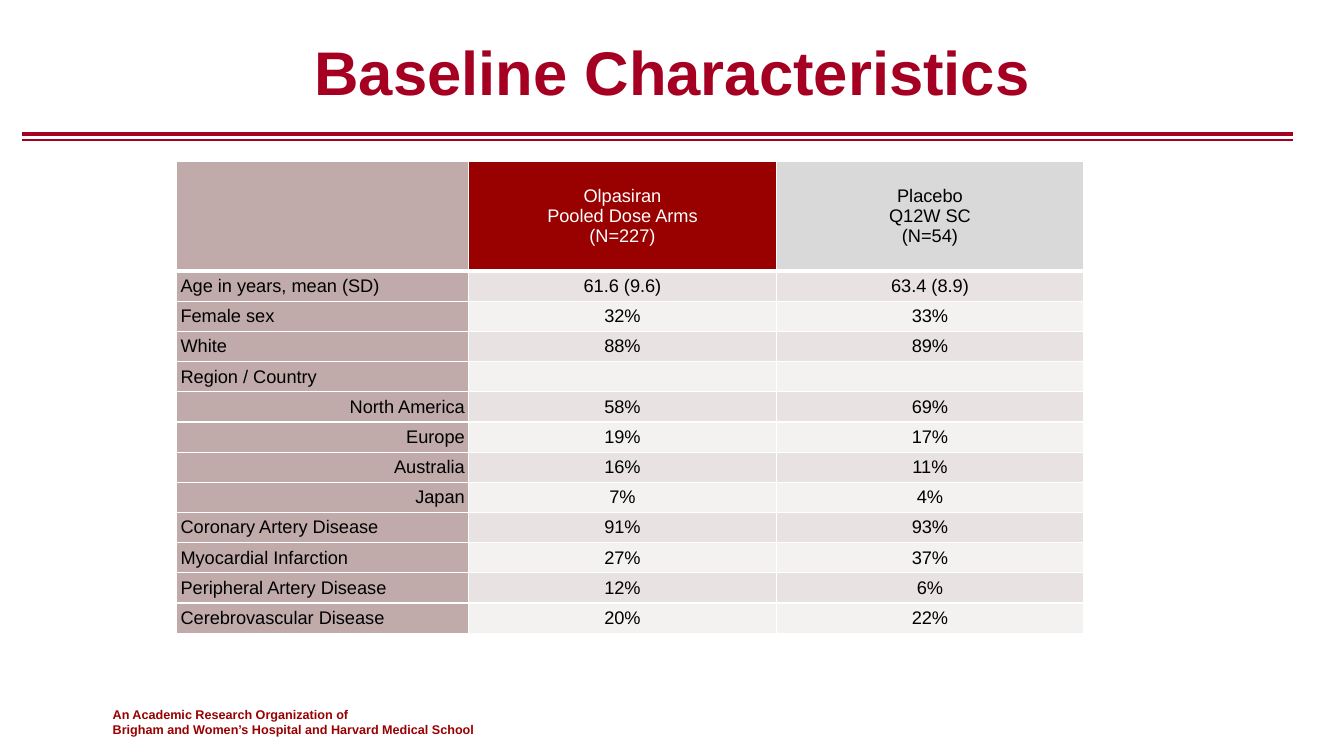
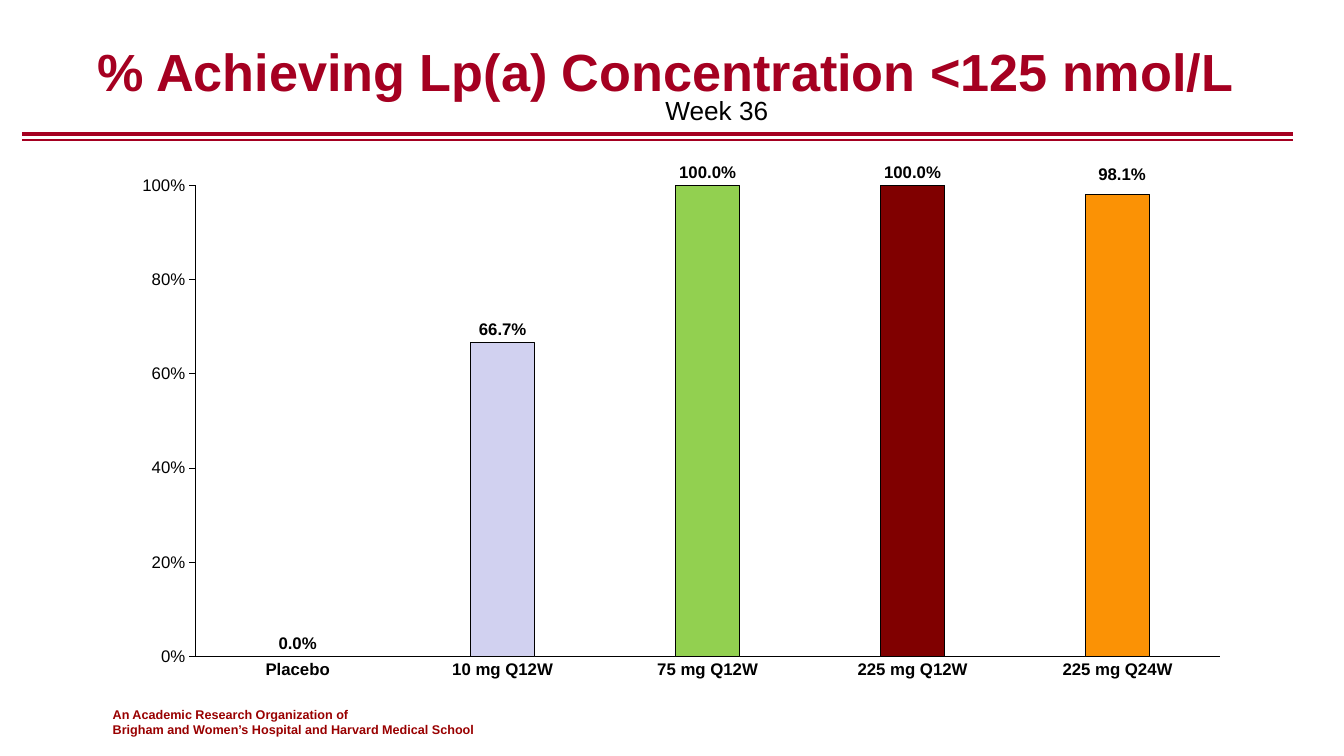
from lxml.etree import SubElement
from pptx import Presentation
from pptx.chart.data import CategoryChartData
from pptx.dml.color import RGBColor
from pptx.enum.chart import XL_CHART_TYPE, XL_LABEL_POSITION, XL_TICK_MARK
from pptx.enum.text import MSO_ANCHOR, PP_ALIGN
from pptx.oxml import parse_xml
from pptx.oxml.ns import nsdecls, qn
from pptx.util import Cm, Pt

FONT = "Arial"
COLORS = {
    "title": "A50021", "footer": "990000", "black": "000000", "white": "FFFFFF",
    "treated": "990000", "placebo": "D9D9D9", "label": "C0AAAA",
    "odd_row": "E8E2E2", "even_row": "F4F1F1",
}
FOOTER = ("An Academic Research Organization of\n"
          "Brigham and Women’s Hospital and Harvard Medical School")
COLUMN_WIDTHS = (7.36, 7.75, 7.75)
HEADER_HEIGHT, ROW_HEIGHT = 2.77, 0.76
HEADER = (
    ("", "label", "black"),
    ("Olpasiran\nPooled Dose Arms\n(N=227)", "treated", "white"),
    ("Placebo\nQ12W SC\n(N=54)", "placebo", "black"),
)
BASELINE = (
    ("Age in years, mean (SD)", "61.6 (9.6)", "63.4 (8.9)"),
    ("Female sex", "32%", "33%"),
    ("White", "88%", "89%"),
    ("Region / Country", "", ""),
    ("North America", "58%", "69%"),
    ("Europe", "19%", "17%"),
    ("Australia", "16%", "11%"),
    ("Japan", "7%", "4%"),
    ("Coronary Artery Disease", "91%", "93%"),
    ("Myocardial Infarction", "27%", "37%"),
    ("Peripheral Artery Disease", "12%", "6%"),
    ("Cerebrovascular Disease", "20%", "22%"),
)
REGIONS = {"North America", "Europe", "Australia", "Japan"}
# Dose, share of patients below the threshold, bar colour
RESPONSE = (
    ("Placebo", 0, "D1D1F0"),
    ("10 mg Q12W", 0.667, "D1D1F0"),
    ("75 mg Q12W", 1, "92D050"),
    ("225 mg Q12W", 1, "800000"),
    ("225 mg Q24W", 0.981, "FB9205"),
)


def rgb(color):
    return RGBColor.from_string(COLORS.get(color, color))


def style_font(font, size, color="black", bold=False):
    font.name, font.size, font.bold = FONT, Pt(size), bold
    font.color.rgb = rgb(color)


def write(frame, text, size, align=PP_ALIGN.LEFT, **style):
    """Fill a text frame, one paragraph for each line of text."""
    for index, line in enumerate(text.split("\n")):
        paragraph = frame.paragraphs[0] if index == 0 else frame.add_paragraph()
        paragraph.alignment = align
        if line:
            run = paragraph.add_run()
            run.text = line
            style_font(run.font, size, **style)


def set_borders(cell, bottom):
    """Draw white cell edges, 1 pt except for the bottom one."""
    properties = cell._tc.get_or_add_tcPr()
    for side, width in (("L", 1), ("R", 1), ("T", 1), ("B", bottom)):
        edge = SubElement(properties, qn(f"a:ln{side}"), w=str(Pt(width)))
        fill = SubElement(edge, qn("a:solidFill"))
        SubElement(fill, qn("a:srgbClr"), val=COLORS["white"])


def chart_layout(**values):
    """Build a manual chart layout from element names and values."""
    parts = "".join(f'<c:{name} val="{value}"/>' for name, value in values.items())
    return parse_xml(f"<c:layout {nsdecls('c')}><c:manualLayout>{parts}"
                     "</c:manualLayout></c:layout>")


class Deck:
    def __init__(self):
        self.presentation = Presentation()
        self.presentation.slide_width = Cm(33.87)
        self.presentation.slide_height = Cm(19.05)
        self.slide = None

    def new_slide(self, title, title_size):
        self.slide = self.presentation.slides.add_slide(
            self.presentation.slide_layouts[6])
        self.rule(3.38, 3)
        self.rule(3.53, 1.5)
        self.text(FOOTER, (2.59, 17.68, 11, 1.02), size=9, color="footer", bold=True)
        self.text(title, (1.9, 0.2, 30.1, 3.18), anchor=MSO_ANCHOR.MIDDLE,
                  size=title_size, align=PP_ALIGN.CENTER, color="title", bold=True)

    def rule(self, top, width):
        line = self.slide.shapes.add_connector(
            1, Cm(0.56), Cm(top), Cm(32.58), Cm(top))
        line.line.color.rgb = rgb("title")
        line.line.width = Pt(width)
        SubElement(line._element.spPr, qn("a:effectLst"))

    def text(self, text, box, anchor=MSO_ANCHOR.TOP, **style):
        frame = self.slide.shapes.add_textbox(*map(Cm, box)).text_frame
        frame.word_wrap = True
        frame.vertical_anchor = anchor
        write(frame, text, **style)

    def cell(self, cell, text, fill, align=PP_ALIGN.CENTER, color="black", bottom=1):
        cell.margin_left = cell.margin_right = Cm(0.1)
        cell.margin_top = cell.margin_bottom = 0
        cell.vertical_anchor = MSO_ANCHOR.MIDDLE
        write(cell.text_frame, text, 13, align, color=color)
        set_borders(cell, bottom)
        cell.fill.solid()
        cell.fill.fore_color.rgb = rgb(fill)

    def baseline_table(self, left, top):
        height = HEADER_HEIGHT + ROW_HEIGHT * len(BASELINE)
        table = self.slide.shapes.add_table(
            len(BASELINE) + 1, len(HEADER), Cm(left), Cm(top),
            Cm(sum(COLUMN_WIDTHS)), Cm(height)).table
        for column, width in zip(table.columns, COLUMN_WIDTHS):
            column.width = Cm(width)
        for index, row in enumerate(table.rows):
            row.height = Cm(ROW_HEIGHT if index else HEADER_HEIGHT)
        for column, (text, fill, color) in enumerate(HEADER):
            self.cell(table.cell(0, column), text, fill, color=color, bottom=3)
        for row, (label, *values) in enumerate(BASELINE, 1):
            align = PP_ALIGN.RIGHT if label in REGIONS else PP_ALIGN.LEFT
            self.cell(table.cell(row, 0), label, "label", align)
            for column, value in enumerate(values, 1):
                self.cell(table.cell(row, column), value,
                          "odd_row" if row % 2 else "even_row")

    def response_chart(self, box):
        doses, shares, bar_colors = zip(*RESPONSE)
        data = CategoryChartData(number_format="0.0%")
        data.categories = doses
        data.add_series("Series 1", shares)
        chart = self.slide.shapes.add_chart(
            XL_CHART_TYPE.COLUMN_CLUSTERED, *map(Cm, box), data).chart
        chart.has_legend = chart.has_title = False
        style_font(chart.font, 10)
        self.chart_axes(chart)

        plot = chart.plots[0]
        plot.vary_by_categories = False
        plot.gap_width, plot.overlap = 219, -27
        series = plot.series[0]
        series.invert_if_negative = False
        for index, color in enumerate(bar_colors):
            bar = series.points[index].format
            bar.fill.solid()
            bar.fill.fore_color.rgb = rgb(color)
            bar.line.color.rgb = rgb("black")
            bar.line.width = Pt(0.75)
        self.bar_labels(series)

        plot_area = chart._chartSpace.chart.plotArea
        for layout in plot_area.findall(qn("c:layout")):
            plot_area.remove(layout)
        plot_area.insert(0, chart_layout(
            layoutTarget="inner", xMode="edge", yMode="edge",
            x=0.086, y=0.088, w=0.914, h=0.809))

    def chart_axes(self, chart):
        share_axis, dose_axis = chart.value_axis, chart.category_axis
        share_axis.minimum_scale, share_axis.maximum_scale = 0, 1
        share_axis.major_unit = 0.2
        share_axis.has_major_gridlines = False
        share_axis.tick_labels.number_format = "0%"
        share_axis.tick_labels.number_format_is_linked = False
        for axis, tick, bold in ((share_axis, XL_TICK_MARK.OUTSIDE, False),
                                 (dose_axis, XL_TICK_MARK.NONE, True)):
            axis.major_tick_mark = tick
            axis.minor_tick_mark = XL_TICK_MARK.NONE
            axis.format.line.color.rgb = rgb("black")
            axis.format.line.width = Pt(0.75)
            style_font(axis.tick_labels.font, 12, bold=bold)

    def bar_labels(self, series):
        labels = series.data_labels
        labels.show_value = True
        labels.number_format = "0.0%"
        labels.number_format_is_linked = False
        last_label = series.points[len(RESPONSE) - 1].data_label
        for label in (labels, last_label):
            label.position = XL_LABEL_POSITION.OUTSIDE_END
            style_font(label.font, 12, bold=True)
        # The last label sits slightly above and to the right of its bar
        last = series._element.find(".//" + qn("c:dLbl"))
        last.insert(1, chart_layout(x=0.004, y=-0.012))
        last.insert(2, parse_xml(
            f'<c:numFmt {nsdecls("c")} formatCode="0.0%" sourceLinked="0"/>'))


def main():
    deck = Deck()
    deck.new_slide("Baseline Characteristics", 44)
    deck.baseline_table(4.45, 4.06)

    deck.new_slide("% Achieving Lp(a) Concentration <125 nmol/L ", 37.3)
    deck.response_chart((2.49, 3.38, 28.27, 14.68))
    deck.text("Week 36", (15.44, 2.24, 4.17, 1.07), size=18.7, align=PP_ALIGN.RIGHT)
    deck.presentation.save("out.pptx")


if __name__ == "__main__":
    main()
